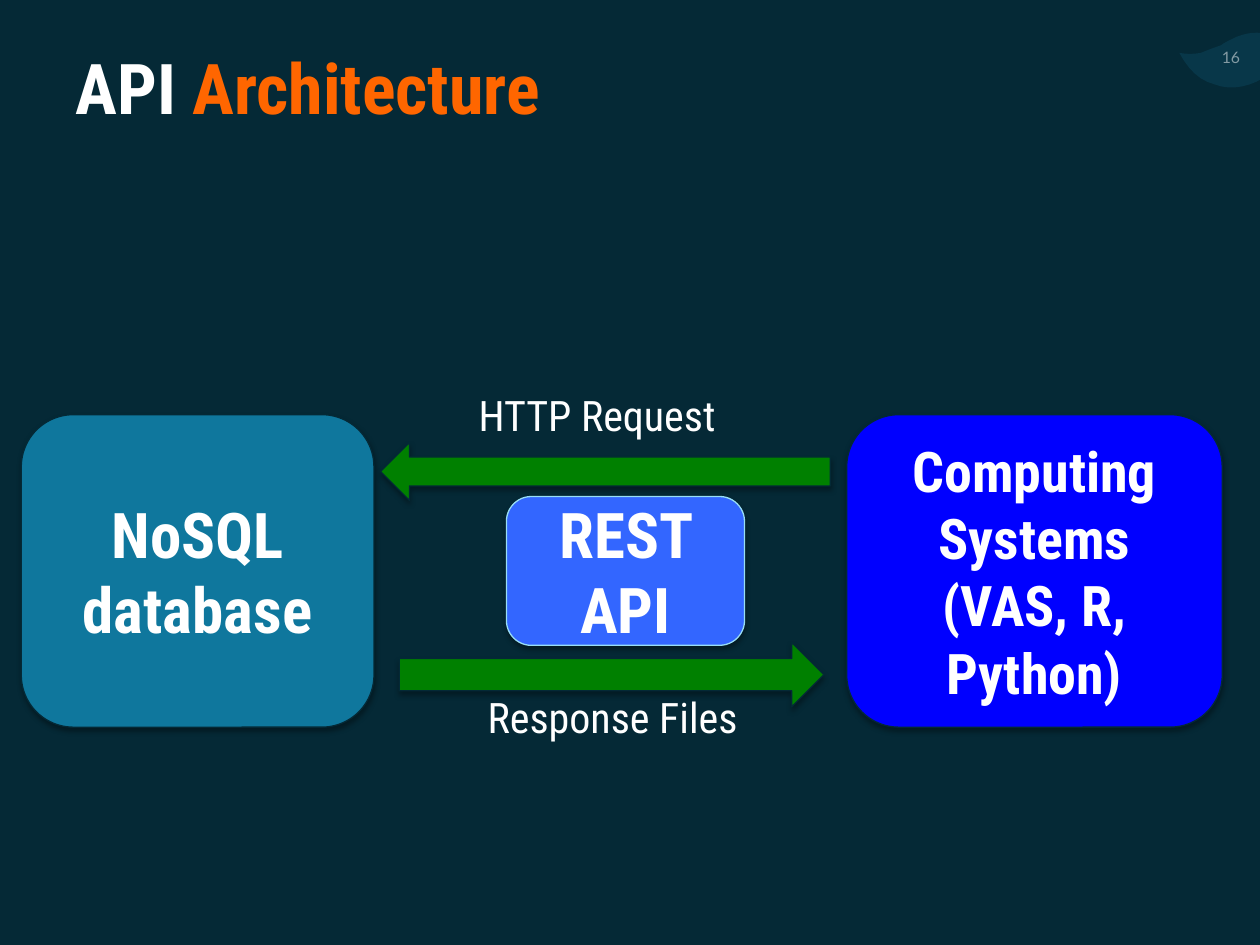
from dataclasses import dataclass
from typing import Optional

from lxml import etree
from pptx import Presentation
from pptx.dml.color import RGBColor
from pptx.enum.shapes import MSO_SHAPE
from pptx.enum.text import MSO_ANCHOR, MSO_AUTO_SIZE, PP_ALIGN
from pptx.oxml import parse_xml
from pptx.oxml.ns import qn
from pptx.util import Cm, Pt

ROUNDED = MSO_SHAPE.ROUNDED_RECTANGLE
LEFT_ARROW = MSO_SHAPE.LEFT_ARROW
RIGHT_ARROW = MSO_SHAPE.RIGHT_ARROW
TOP, MIDDLE = MSO_ANCHOR.TOP, MSO_ANCHOR.MIDDLE
LEFT, CENTER = PP_ALIGN.LEFT, PP_ALIGN.CENTER
NO_FIT = MSO_AUTO_SIZE.NONE

NIGHT = RGBColor(0x05, 0x29, 0x36)
EDGE = RGBColor(0x04, 0x29, 0x36)
LEAF = RGBColor(0x08, 0x37, 0x49)
WHITE = RGBColor(0xFF, 0xFF, 0xFF)
ORANGE = RGBColor(0xFF, 0x66, 0x00)
TEAL = RGBColor(0x0F, 0x77, 0x9D)
BLUE = RGBColor(0x00, 0x00, 0xFF)
SKY = RGBColor(0x33, 0x66, 0xFF)
PALE = RGBColor(0x98, 0xDD, 0xF5)
GREEN = RGBColor(0x00, 0x80, 0x00)

HEADING_FONT = "Roboto Condensed"
NUMBER_FONT = "Lato"
DRAWING_NS = "http://schemas.openxmlformats.org/drawingml/2006/main"
SHADOW_XML = (
    f'<a:outerShdw xmlns:a="{DRAWING_NS}" blurRad="39370" dist="22860" dir="5400000" '
    'rotWithShape="0"><a:srgbClr val="000000"><a:alpha val="35000"/></a:srgbClr></a:outerShdw>'
)

LEAF_UNITS_PER_INCH = 100
LEAF_START = (1036, 55)
LEAF_CURVES = [
    ((1033, 48), (1028, 42), (1023, 37)),
    ((1018, 32), (1012, 28), (1005, 27)),
    ((998, 25), (990, 26), (982, 29)),
    ((978, 31), (973, 33), (969, 36)),
    ((963, 38), (958, 40), (953, 42)),
    ((947, 43), (942, 43), (936, 42)),
    ((943, 55), (952, 64), (964, 67)),
    ((974, 71), (986, 70), (997, 65)),
    ((1003, 62), (1008, 58), (1014, 56)),
    ((1022, 53), (1029, 53), (1036, 55)),
]
CURVE_STEPS = 6
FINENESS = 100


@dataclass
class Block:
    kind: int
    left: float
    top: float
    width: float
    height: float
    fill: RGBColor
    line: RGBColor = EDGE
    text: Optional[str] = None
    size: int = 36


@dataclass
class Label:
    text: str
    left: float
    top: float
    width: float
    height: float = 1.27


BLOCKS = [
    Block(ROUNDED, 0.43, 8.36, 7.11, 6.3, TEAL, text="NoSQL database"),
    Block(ROUNDED, 17.07, 8.36, 7.57, 6.3, BLUE,
          text="Computing Systems (VAS, R, Python)", size=32),
    Block(ROUNDED, 10.21, 10.01, 4.8, 3, SKY, line=PALE, text="REST API"),
    Block(RIGHT_ARROW, 8.05, 12.95, 8.56, 1.3, GREEN),
    Block(LEFT_ARROW, 7.67, 8.92, 9.07, 1.17, GREEN),
]
LABELS = [
    Label("HTTP Request", 9.4, 7.72, 8.36),
    Label("Response Files", 9.58, 13.82, 7.98),
]


def add_text(paragraph, text: str, *, size: float, color: RGBColor = WHITE,
             font: str = HEADING_FONT, bold: bool = False, align=LEFT):
    paragraph.alignment = align
    span = paragraph.add_run()
    span.text = text
    span.font.name = font
    span.font.size = Pt(size)
    span.font.bold = bold
    span.font.color.rgb = color
    return span


def draw_title(page) -> None:
    title = page.shapes.title
    title.left, title.top, title.width, title.height = Cm(1.27), Cm(0.97), Cm(22.86), Cm(3.18)
    frame = title.text_frame
    frame.auto_size = NO_FIT
    frame.vertical_anchor = TOP
    paragraph = frame.paragraphs[0]
    paragraph.line_spacing = 0.9
    for text, color in (("API ", WHITE), ("Architecture", ORANGE)):
        add_text(paragraph, text, size=40, color=color, bold=True)


def draw_block(page, block: Block) -> None:
    box = page.shapes.add_shape(block.kind, Cm(block.left), Cm(block.top),
                                Cm(block.width), Cm(block.height))
    box.fill.solid()
    box.fill.fore_color.rgb = block.fill
    box.line.color.rgb = block.line
    box.line.width = Pt(0.75)
    box.shadow.inherit = False
    box._element.spPr.find(qn("a:effectLst")).append(parse_xml(SHADOW_XML))
    if block.text:
        frame = box.text_frame
        frame.word_wrap = True
        frame.vertical_anchor = MIDDLE
        add_text(frame.paragraphs[0], block.text, size=block.size, bold=True, align=CENTER)


def draw_label(page, label: Label) -> None:
    box = page.shapes.add_textbox(Cm(label.left), Cm(label.top), Cm(label.width), Cm(label.height))
    box.text_frame.word_wrap = True
    add_text(box.text_frame.paragraphs[0], label.text, size=24)


def curve_points(start, curves) -> list:
    points = []
    for first, second, end in curves:
        for step in range(1, CURVE_STEPS + 1):
            t = step / CURVE_STEPS
            u = 1 - t
            points.append(tuple(
                FINENESS * (u**3 * a + 3 * u**2 * t * b + 3 * u * t**2 * c + t**3 * d)
                for a, b, c, d in zip(start, first, second, end)
            ))
        start = end
    return points


def draw_leaf(page) -> None:
    points = curve_points(LEAF_START, LEAF_CURVES)
    scale = Cm(2.54) / (LEAF_UNITS_PER_INCH * FINENESS)
    builder = page.shapes.build_freeform(*points[-1], scale=scale)
    builder.add_line_segments(points, close=True)
    leaf = builder.convert_to_shape()
    leaf.fill.solid()
    leaf.fill.fore_color.rgb = LEAF
    leaf.line.fill.background()
    leaf.shadow.inherit = False


def draw_page_number(page) -> None:
    box = page.shapes.add_textbox(Cm(24.38), Cm(0.69), Cm(0.79), Cm(0.91))
    frame = box.text_frame
    frame.margin_left = Cm(0.25)
    frame.margin_right = Cm(0)
    frame.word_wrap = False
    frame.vertical_anchor = MIDDLE
    span = add_text(frame.paragraphs[0], "16", size=9, font=NUMBER_FONT)
    color = span._r.rPr.find(f".//{qn('a:srgbClr')}")
    etree.SubElement(color, qn("a:alpha")).set("val", "50000")


def main() -> None:
    deck = Presentation()
    deck.slide_width, deck.slide_height = Cm(25.4), Cm(19.05)
    page = deck.slides.add_slide(deck.slide_layouts[5])
    page.background.fill.solid()
    page.background.fill.fore_color.rgb = NIGHT
    draw_leaf(page)
    draw_page_number(page)
    draw_title(page)
    for block in BLOCKS:
        draw_block(page, block)
    for label in LABELS:
        draw_label(page, label)
    deck.save("out.pptx")


if __name__ == "__main__":
    main()
